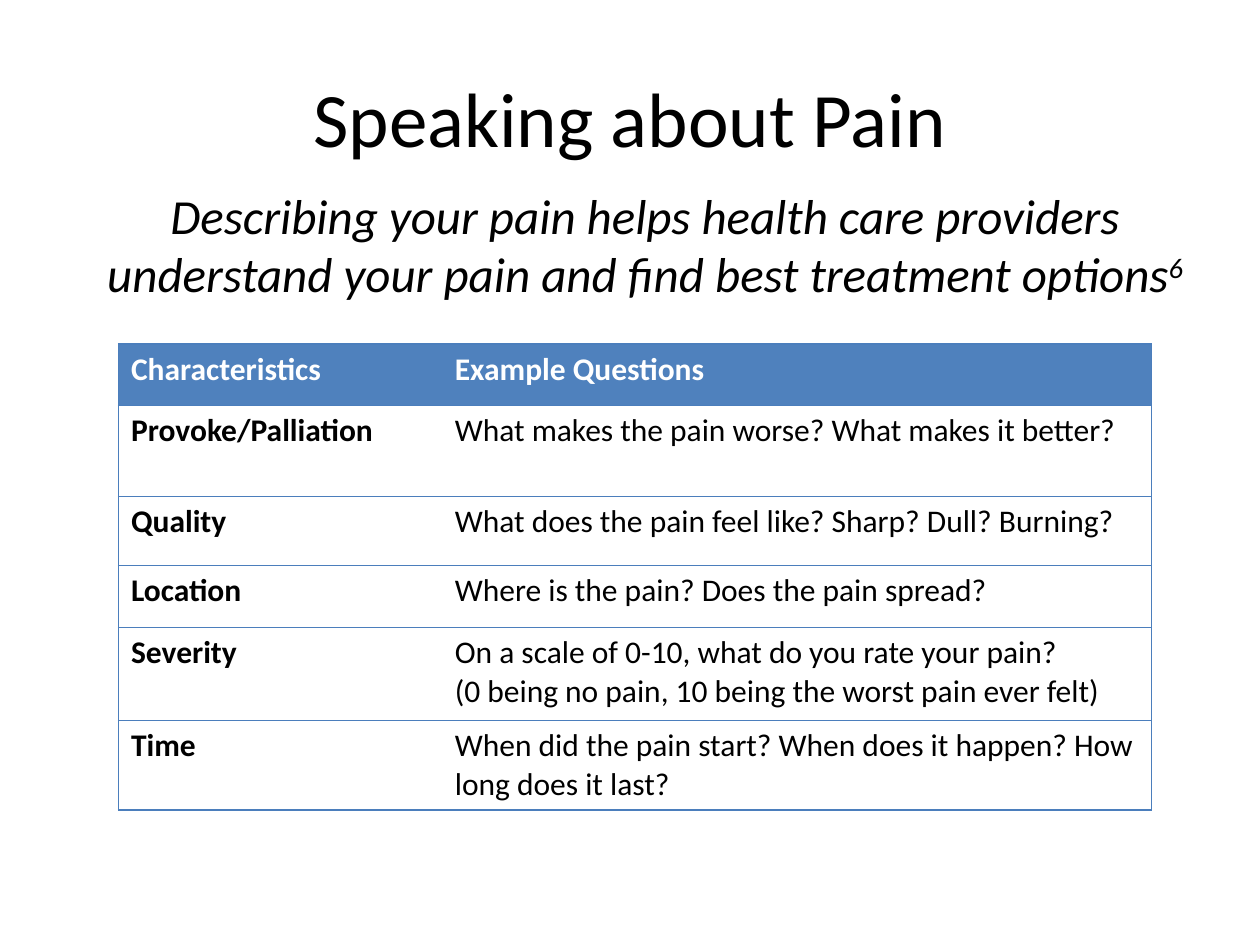
from dataclasses import dataclass

from lxml.etree import SubElement
from pptx import Presentation
from pptx.dml.color import RGBColor
from pptx.enum.text import MSO_ANCHOR, PP_ALIGN
from pptx.oxml.ns import qn
from pptx.util import Inches, Pt


@dataclass(frozen=True)
class Theme:
    font: str = "Calibri"
    text: str = "000000"
    header_text: str = "FFFFFF"
    header_fill: str = "4F81BD"
    cell_fill: str = "FFFFFF"
    border: str = "4B7EBC"
    border_width: float = 0.75
    title_size: int = 44
    subtitle_size: int = 28
    table_size: int = 18


THEME = Theme()

ROWS = [
    ("Characteristics", "Example Questions"),
    ("Provoke/Palliation", "What makes the pain worse? What makes it better?"),
    ("Quality", "What does the pain feel like? Sharp? Dull? Burning?"),
    ("Location", "Where is the pain? Does the pain spread?"),
    ("Severity", "On a scale of 0-10, what do you rate your pain?\n"
                 "(0 being no pain, 10 being the worst pain ever felt)"),
    ("Time", "When did the pain start? When does it happen? How long does it last?"),
]
ROW_HEIGHTS = [0.49, 0.72, 0.55, 0.49, 0.74, 0.71]
COLUMN_WIDTHS = [2.57, 5.63]


def style_font(paragraph, size, color=THEME.text, bold=False, italic=False):
    font = paragraph.font
    font.name = THEME.font
    font.size = Pt(size)
    font.bold = bold
    font.italic = italic
    font.color.rgb = RGBColor.from_string(color)


def add_centered_text(slide, box, text, size, anchor, italic=False):
    """Add a centred text box and return its paragraph."""
    frame = slide.shapes.add_textbox(*map(Inches, box)).text_frame
    frame.word_wrap = True
    frame.vertical_anchor = anchor
    paragraph = frame.paragraphs[0]
    paragraph.alignment = PP_ALIGN.CENTER
    paragraph.add_run().text = text
    style_font(paragraph, size, italic=italic)
    return paragraph


def add_superscript(paragraph, text):
    run = paragraph.add_run()
    run.text = text
    run.font._element.set("baseline", "30000")


def set_borders(cell, visible_sides):
    """Draw the given sides and hide the others; must run before the fill is set."""
    properties = cell._tc.get_or_add_tcPr()
    for side in "LRTB":
        line = SubElement(properties, qn(f"a:ln{side}"), w=str(Pt(THEME.border_width)))
        if side in visible_sides:
            fill = SubElement(line, qn("a:solidFill"))
            SubElement(fill, qn("a:srgbClr"), val=THEME.border)
        else:
            SubElement(line, qn("a:noFill"))


def fill_cell(cell, text, is_header, is_first_column):
    set_borders(cell, "LTB" if is_first_column else "RTB")
    cell.fill.solid()
    cell.fill.fore_color.rgb = RGBColor.from_string(
        THEME.header_fill if is_header else THEME.cell_fill)
    cell.text = text
    for paragraph in cell.text_frame.paragraphs:
        style_font(paragraph, THEME.table_size,
                   THEME.header_text if is_header else THEME.text,
                   bold=is_header or is_first_column)


def add_question_table(slide, left, top):
    size = (sum(COLUMN_WIDTHS), sum(ROW_HEIGHTS))
    table = slide.shapes.add_table(
        len(ROWS), len(COLUMN_WIDTHS), *map(Inches, (left, top, *size))).table
    table.horz_banding = False
    for column, width in zip(table.columns, COLUMN_WIDTHS):
        column.width = Inches(width)
    for row, height in zip(table.rows, ROW_HEIGHTS):
        row.height = Inches(height)
    for row_index, texts in enumerate(ROWS):
        for column_index, text in enumerate(texts):
            fill_cell(table.cell(row_index, column_index), text,
                      row_index == 0, column_index == 0)


def main():
    presentation = Presentation()
    presentation.slide_width = Inches(10)
    presentation.slide_height = Inches(7.5)
    slide = presentation.slides.add_slide(presentation.slide_layouts[6])

    add_centered_text(slide, (0.5, 0.3, 9, 1.25), "Speaking about Pain",
                      THEME.title_size, MSO_ANCHOR.MIDDLE)
    subtitle = add_centered_text(
        slide, (0.62, 1.42, 9, 1.62),
        "Describing your pain helps health care providers "
        "understand your pain and find best treatment options",
        THEME.subtitle_size, MSO_ANCHOR.TOP, italic=True)
    add_superscript(subtitle, "6")
    add_question_table(slide, 0.94, 2.73)

    presentation.save("out.pptx")


if __name__ == "__main__":
    main()
